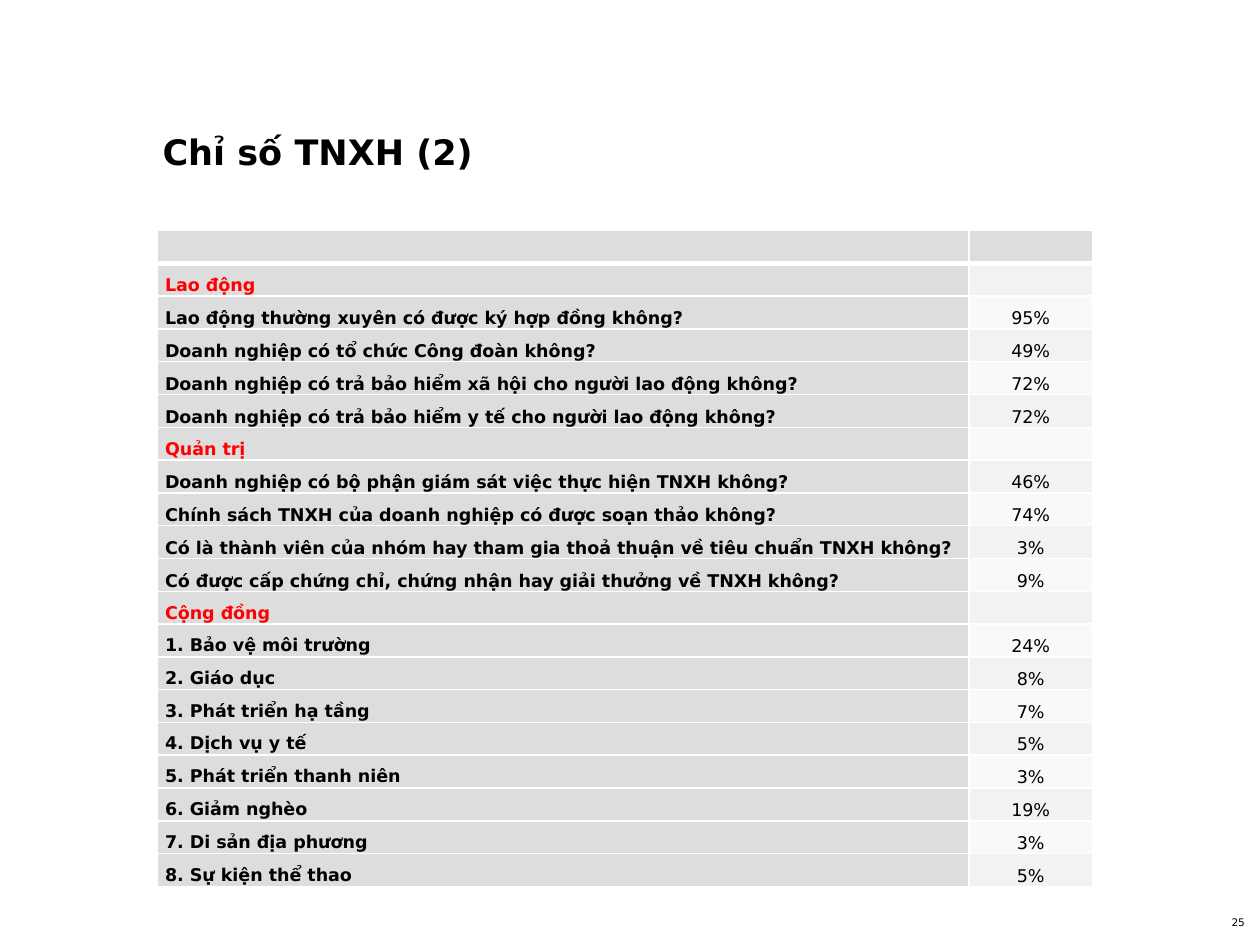
from lxml import etree
from pptx import Presentation
from pptx.dml.color import RGBColor
from pptx.enum.text import MSO_ANCHOR, PP_ALIGN
from pptx.oxml.ns import qn
from pptx.util import Inches, Pt

LEFT, CENTER, RIGHT = PP_ALIGN.LEFT, PP_ALIGN.CENTER, PP_ALIGN.RIGHT
TOP, MIDDLE, BOTTOM = MSO_ANCHOR.TOP, MSO_ANCHOR.MIDDLE, MSO_ANCHOR.BOTTOM
FONT = "DejaVu Sans"
COLORS = {
    "text": "000000",
    "section": "FF0000",
    "border": "FFFFFF",
    "label": "DDDDDD",
    "odd": "F2F2F2",
    "even": "F9F9F9",
}
SECTIONS = [
    ("Lao động", BOTTOM, [
        ("Lao động thường xuyên có được ký hợp đồng không?", "95%"),
        ("Doanh nghiệp có tổ chức Công đoàn không?", "49%"),
        ("Doanh nghiệp có trả bảo hiểm xã hội cho người lao động không?", "72%"),
        ("Doanh nghiệp có trả bảo hiểm y tế cho người lao động không?", "72%"),
    ]),
    ("Quản trị", BOTTOM, [
        ("Doanh nghiệp có bộ phận giám sát việc thực hiện TNXH không?", "46%"),
        ("Chính sách TNXH của doanh nghiệp có được soạn thảo không?", "74%"),
        ("Có là thành viên của nhóm hay tham gia thoả thuận về tiêu chuẩn TNXH không?", "3%"),
        ("Có được cấp chứng chỉ, chứng nhận hay giải thưởng về TNXH không?", "9%"),
    ]),
    ("Cộng đồng", MIDDLE, [
        ("1. Bảo vệ môi trường", "24%"),
        ("2. Giáo dục", "8%"),
        ("3. Phát triển hạ tầng", "7%"),
        ("4. Dịch vụ y tế", "5%"),
        ("5. Phát triển thanh niên", "3%"),
        ("6. Giảm nghèo", "19%"),
        ("7. Di sản địa phương", "3%"),
        ("8. Sự kiện thể thao", "5%"),
    ]),
]


def set_attributes(target, values):
    """Set each named value on the target."""
    for name, value in values.items():
        setattr(target, name, value)


def write_text(frame, text, size, color="text", bold=False, align=LEFT):
    """Write one formatted paragraph and return it."""
    paragraph = frame.paragraphs[0]
    paragraph.alignment = align
    run = paragraph.add_run()
    run.text = text
    set_attributes(run.font, {"name": FONT, "size": Pt(size), "bold": bold})
    run.font.color.rgb = RGBColor.from_string(COLORS[color])
    return paragraph


def format_frame(frame, anchor):
    """Remove the insets of a text frame and anchor its text."""
    set_attributes(frame, {
        "margin_left": 0, "margin_top": 0, "margin_right": 0, "margin_bottom": 0,
        "word_wrap": True, "vertical_anchor": anchor,
    })


def add_title(slide, text, box):
    """Place the title placeholder in the box."""
    title = slide.shapes.title
    set_attributes(title, dict(zip(("left", "top", "width", "height"), box)))
    format_frame(title.text_frame, BOTTOM)
    write_text(title.text_frame, text, 20, bold=True)


def add_page_number(slide, text, box):
    """Place the page number in the box."""
    frame = slide.shapes.add_textbox(*box).text_frame
    format_frame(frame, TOP)
    write_text(frame, text, 6, align=RIGHT)


def set_borders(cell, widths):
    """Draw the sides of a cell with the given point widths."""
    properties = cell._tc.get_or_add_tcPr()
    for side, width in widths.items():
        line = etree.SubElement(properties, qn(f"a:ln{side}"), w=str(Pt(width)))
        fill = etree.SubElement(line, qn("a:solidFill"))
        etree.SubElement(fill, qn("a:srgbClr"), val=COLORS["border"])


def format_cell(cell, text, fill, borders, anchor=BOTTOM, **text_format):
    """Fill, border and write one table cell."""
    set_borders(cell, borders)
    cell.fill.solid()
    cell.fill.fore_color.rgb = RGBColor.from_string(COLORS[fill])
    set_attributes(cell, {
        "margin_left": Inches(0.06), "margin_right": Inches(0.06),
        "margin_top": 0, "margin_bottom": 0, "vertical_anchor": anchor,
    })
    if text:
        paragraph = write_text(cell.text_frame, text, 10, **text_format)
        set_attributes(paragraph, {"line_spacing": 1.5, "space_after": Pt(10)})
    else:
        paragraph = cell.text_frame.paragraphs[0]
        etree.SubElement(paragraph._p, qn("a:endParaRPr"), sz="1000")


def add_index_table(slide, sections, box):
    """Place the table of index questions and shares in the box."""
    rows = [("", "", BOTTOM, "text")]
    for heading, anchor, questions in sections:
        rows.append((heading, "", BOTTOM, "section"))
        rows += [(question, share, anchor, "text") for question, share in questions]
    left, top, width, height = box
    table = slide.shapes.add_table(len(rows), 2, left, top, width, height).table
    set_attributes(table, {"first_row": False, "horz_banding": False})
    share_width = Inches(0.98)
    table.columns[0].width = width - share_width
    table.columns[1].width = share_width
    for index, (label, share, anchor, color) in enumerate(rows):
        table.rows[index].height = height // len(rows)
        borders = {"L": 1, "R": 1, "T": 3 if index == 1 else 1, "B": 3 if index == 0 else 1}
        share_fill = "label" if index == 0 else "odd" if index % 2 else "even"
        format_cell(table.cell(index, 0), label, "label", borders, anchor, color=color, bold=True)
        format_cell(table.cell(index, 1), share, share_fill, borders, align=CENTER)


def main():
    """Build and save the presentation."""
    presentation = Presentation()
    set_attributes(presentation, {"slide_width": Inches(10), "slide_height": Inches(7.5)})
    slide = presentation.slides.add_slide(presentation.slide_layouts[5])
    add_title(slide, "Chỉ số TNXH (2)", (Inches(1.29), Inches(0.67), Inches(6.29), Inches(0.7)))
    add_page_number(slide, "25", (Inches(9.42), Inches(7.27), Inches(0.46), Inches(0.17)))
    add_index_table(slide, SECTIONS, (Inches(1.25), Inches(1.83), Inches(7.42), Inches(5.21)))
    presentation.save("out.pptx")


if __name__ == "__main__":
    main()
